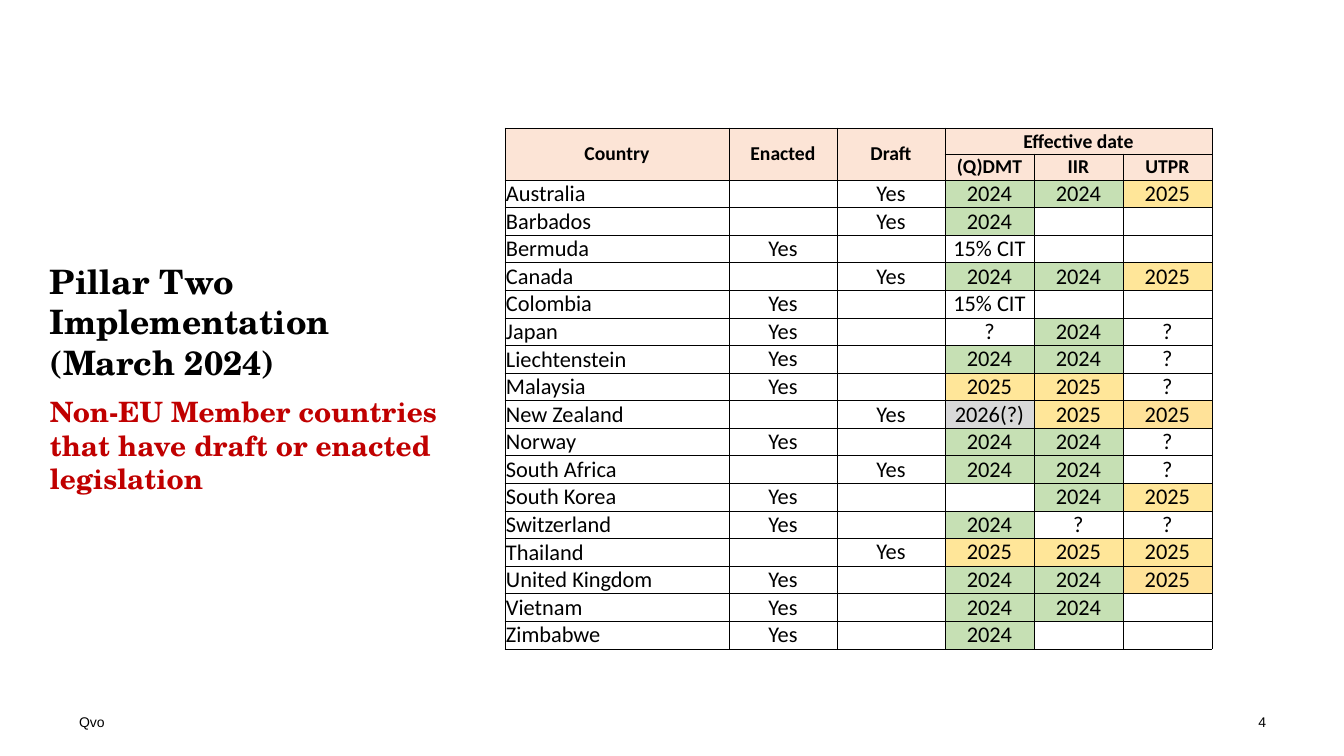
from lxml import etree
from pptx import Presentation
from pptx.dml.color import RGBColor
from pptx.enum.text import MSO_ANCHOR, PP_ALIGN
from pptx.oxml.ns import qn
from pptx.util import Emu, Pt

LEFT, CENTER, RIGHT = PP_ALIGN.LEFT, PP_ALIGN.CENTER, PP_ALIGN.RIGHT
TOP, MIDDLE, BOTTOM = MSO_ANCHOR.TOP, MSO_ANCHOR.MIDDLE, MSO_ANCHOR.BOTTOM

COLORS = {
    "black": "000000", "red": "C00000", "header": "FCE4D6", "green": "C6E0B4",
    "amber": "FFE699", "deep amber": "FFE299", "grey": "D9D9D9",
}
YEAR_FILLS = {"2024": "green", "2025": "amber", "2026(?)": "grey"}
DEEP_AMBER_UTPR = ("New Zealand", "United Kingdom")

HEADERS = [["Country", "Enacted", "Draft", "Effective date", "", ""],
           ["", "", "", "(Q)DMT", "IIR", "UTPR"]]
COUNTRIES = [  # country, status, (Q)DMT, IIR, UTPR
    ("Australia", "Draft", "2024", "2024", "2025"),
    ("Barbados", "Draft", "2024", "", ""),
    ("Bermuda", "Enacted", "15% CIT", "", ""),
    ("Canada", "Draft", "2024", "2024", "2025"),
    ("Colombia", "Enacted", "15% CIT", "", ""),
    ("Japan", "Enacted", "?", "2024", "?"),
    ("Liechtenstein", "Enacted", "2024", "2024", "?"),
    ("Malaysia", "Enacted", "2025", "2025", "?"),
    ("New Zealand", "Draft", "2026(?)", "2025", "2025"),
    ("Norway", "Enacted", "2024", "2024", "?"),
    ("South Africa", "Draft", "2024", "2024", "?"),
    ("South Korea", "Enacted", "", "2024", "2025"),
    ("Switzerland", "Enacted", "2024", "?", "?"),
    ("Thailand", "Draft", "2025", "2025", "2025"),
    ("United Kingdom", "Enacted", "2024", "2024", "2025"),
    ("Vietnam", "Enacted", "2024", "2024", ""),
    ("Zimbabwe", "Enacted", "2024", "", ""),
]
COL_WIDTHS = [224, 108, 108, 89, 89, 89]
HEADER_HEIGHT, BODY_HEIGHT = 26, 469


def px(n):
    return Emu(round(n * 914400 / 100.8))


class Deck:
    def __init__(self, width, height):
        self.prs = Presentation()
        self.prs.slide_width, self.prs.slide_height = px(width), px(height)
        self.s = self.prs.slides.add_slide(self.prs.slide_layouts[6])

    def style(self, p, size, font="Arial", color="black", bold=False, align=LEFT):
        p.alignment = align
        for r in p.runs:
            for name, value in {"size": Pt(size), "name": font, "bold": bold}.items():
                setattr(r.font, name, value)
            r.font.color.rgb = RGBColor.from_string(COLORS[color])

    def text(self, x, y, w, h, paragraphs, space_after=0):
        tf = self.s.shapes.add_textbox(px(x), px(y), px(w), px(h)).text_frame
        frame = {"word_wrap": True, "vertical_anchor": TOP, "margin_left": 0,
                 "margin_right": 0, "margin_top": 0, "margin_bottom": 0}
        for name, value in frame.items():
            setattr(tf, name, value)
        for i, (words, fmt) in enumerate(paragraphs):
            p = tf.add_paragraph() if i else tf.paragraphs[0]
            p.text = words
            p.space_after = Pt(space_after)
            self.style(p, **fmt)

    def table(self, x, y, widths, heights):
        tbl = self.s.shapes.add_table(len(heights), len(widths), px(x), px(y),
                                      px(sum(widths)), px(sum(heights))).table
        tbl.first_row = tbl.horz_banding = False
        for col, w in zip(tbl.columns, widths):
            col.width = px(w)
        for row, h in zip(tbl.rows, heights):
            row.height = px(h)
        return tbl

    def cell(self, cell, words, size, fill=None, bold=False, align=CENTER, anchor=MIDDLE):
        layout = {"vertical_anchor": anchor, "margin_left": px(1), "margin_right": px(1),
                  "margin_top": 0, "margin_bottom": 0}
        for name, value in layout.items():
            setattr(cell, name, value)
        p = cell.text_frame.paragraphs[0]
        if words:
            p.text = words
        else:  # keeps an empty cell from growing its row
            etree.SubElement(p._p, qn("a:endParaRPr"), sz=str(size * 100))
        self.style(p, size, "Calibri", bold=bold, align=align)
        if fill:
            cell.fill.solid()
            cell.fill.fore_color.rgb = RGBColor.from_string(COLORS[fill])
        else:
            cell.fill.background()
        self.borders(cell)

    def borders(self, cell):
        tcPr = cell._tc.get_or_add_tcPr()
        for i, side in enumerate("LRTB"):
            ln = etree.Element(qn("a:ln" + side), w=str(Pt(0.5)))
            solid = etree.SubElement(ln, qn("a:solidFill"))
            etree.SubElement(solid, qn("a:srgbClr"), val=COLORS["black"])
            tcPr.insert(i, ln)


def main():
    deck = Deck(1344, 756)

    # Footer and page number
    deck.text(79, 714, 381, 17, [("Qvo", {"size": 10})])
    deck.text(1041, 714, 225, 17, [("4", {"size": 10, "align": RIGHT})])

    # Title and subtitle
    heading = {"font": "TeX Gyre Schola", "bold": True}
    deck.text(50, 261, 434, 190, [
        ("Pillar Two Implementation\v(March 2024)", {"size": 24, **heading}),
        ("Non-EU Member countries that have draft or enacted legislation",
         {"size": 20, "color": "red", **heading}),
    ], space_after=9)

    # Table header
    body_rows = [BODY_HEIGHT / len(COUNTRIES)] * len(COUNTRIES)
    tbl = deck.table(505, 128, COL_WIDTHS, [HEADER_HEIGHT] * len(HEADERS) + body_rows)
    for i, labels in enumerate(HEADERS):
        for j, label in enumerate(labels):
            anchor = BOTTOM if label == "Effective date" else MIDDLE
            deck.cell(tbl.cell(i, j), label, 14, "header", bold=True, anchor=anchor)
    for j in range(3):
        tbl.cell(0, j).merge(tbl.cell(1, j))
    tbl.cell(0, 3).merge(tbl.cell(0, 5))

    # One row per country
    for i, (country, status, *dates) in enumerate(COUNTRIES, len(HEADERS)):
        deck.cell(tbl.cell(i, 0), country, 16, align=LEFT, anchor=BOTTOM)
        for j, label in enumerate(("Enacted", "Draft"), 1):
            deck.cell(tbl.cell(i, j), "Yes" if status == label else "", 16)
        for j, date in enumerate(dates, 3):
            deep = j == 5 and country in DEEP_AMBER_UTPR
            fill = "deep amber" if deep else YEAR_FILLS.get(date)
            deck.cell(tbl.cell(i, j), date, 16, fill)

    deck.prs.save("out.pptx")


if __name__ == "__main__":
    main()
